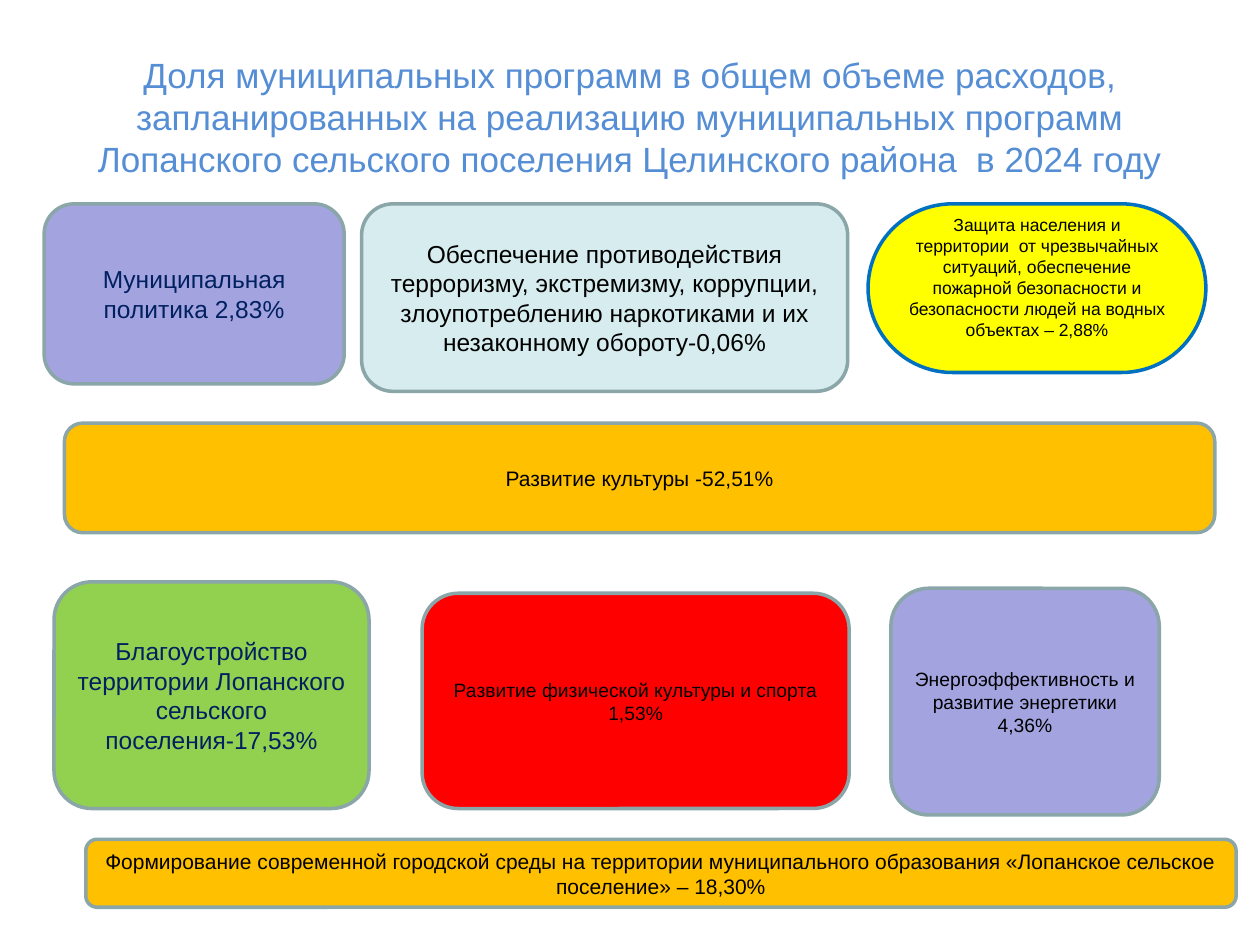
from pptx import Presentation
from pptx.dml.color import RGBColor
from pptx.enum.shapes import MSO_SHAPE
from pptx.enum.text import MSO_ANCHOR, PP_ALIGN
from pptx.util import Cm, Pt

# Content: text, fill, type size, position and optional format
TITLE = ("Доля муниципальных программ в общем объеме расходов, запланированных "
         "на реализацию муниципальных программ Лопанского сельского поселения "
         "Целинского района  в 2024 году")
TITLE_BOX = (1.27, 0.76, 22.86, 3.18)

TOP_ROW = 4.11   # shared top edge of the first row, cm
BAR_WIDTH = 23.19  # both full-width programmes, cm

PROGRAMMES = [
    dict(text="Муниципальная политика 2,83%",
         box=(0.89, TOP_ROW, 6.05, 3.63), fill="lilac", size="large", color="navy"),
    dict(text="Обеспечение противодействия терроризму, экстремизму, коррупции, "
              "злоупотреблению наркотиками и их незаконному обороту-0,06%",
         box=(7.29, TOP_ROW, 9.8, 3.78), fill="ice", size="large"),
    dict(text="Защита населения и территории  от чрезвычайных ситуаций, обеспечение "
              "пожарной безопасности и безопасности людей на водных объектах – 2,88%",
         box=(17.5, TOP_ROW, 6.81, 3.4), fill="yellow", size="tiny",
         line="blue", rounding=0.5, bottom=0.56),
    dict(text="Развитие культуры -52,51%",
         box=(1.3, 8.53, BAR_WIDTH, 2.21), fill="amber", size="medium"),
    dict(text="Благоустройство территории Лопанского сельского поселения-17,53%",
         box=(1.09, 11.73, 6.35, 4.57), fill="green", size="large", color="navy"),
    dict(text="Развитие физической культуры и спорта 1,53%",
         box=(8.51, 11.96, 8.61, 4.34), fill="red", size="small"),
    dict(text="Энергоэффективность и развитие энергетики 4,36%",
         box=(17.96, 11.86, 5.41, 4.57), fill="lilac", size="small"),
    dict(text="Формирование современной городской среды на территории муниципального "
              "образования «Лопанское сельское поселение» – 18,30%",
         box=(1.73, 16.92, BAR_WIDTH, 1.37), fill="amber", size="medium"),
]

THEME = {
    "font": "Arial",
    "line_width": 2,
    "sizes": {"title": 20, "large": 14, "medium": 12, "small": 11, "tiny": 10},
    "colors": {
        "title": "558ED5", "navy": "002060", "black": "000000",
        "lilac": "A3A3E0", "ice": "D6ECEE", "yellow": "FFFF00",
        "amber": "FFC000", "green": "92D050", "red": "FF0000",
        "outline": "8AA6A8", "blue": "0070C0",
    },
}


def rgb(name):
    return RGBColor.from_string(THEME["colors"][name])


def write(sp, text, size="large", color="black", bottom=None):
    """Put centred text into a shape; bottom is an inset in cm."""
    tf = sp.text_frame
    tf.word_wrap = True
    tf.vertical_anchor = MSO_ANCHOR.MIDDLE
    if bottom is not None:
        tf.margin_bottom = Cm(bottom)
    p = tf.paragraphs[0]
    p.alignment = PP_ALIGN.CENTER
    r = p.add_run()
    r.text = text
    r.font.name = THEME["font"]
    r.font.size = Pt(THEME["sizes"][size])
    r.font.color.rgb = rgb(color)


def add_programme(s, text, box, fill, line="outline", rounding=None, **text_format):
    sp = s.shapes.add_shape(MSO_SHAPE.ROUNDED_RECTANGLE, *map(Cm, box))
    sp.shadow.inherit = False
    if rounding is not None:
        sp.adjustments[0] = rounding
    sp.fill.solid()
    sp.fill.fore_color.rgb = rgb(fill)
    sp.line.color.rgb = rgb(line)
    sp.line.width = Pt(THEME["line_width"])
    write(sp, text, **text_format)


def main():
    prs = Presentation()
    prs.slide_width, prs.slide_height = Cm(25.4), Cm(19.05)
    s = prs.slides.add_slide(prs.slide_layouts[6])

    # Heading
    write(s.shapes.add_textbox(*map(Cm, TITLE_BOX)), TITLE, size="title", color="title")

    # Programme shares
    for programme in PROGRAMMES:
        add_programme(s, **programme)

    prs.save("out.pptx")


if __name__ == "__main__":
    main()
